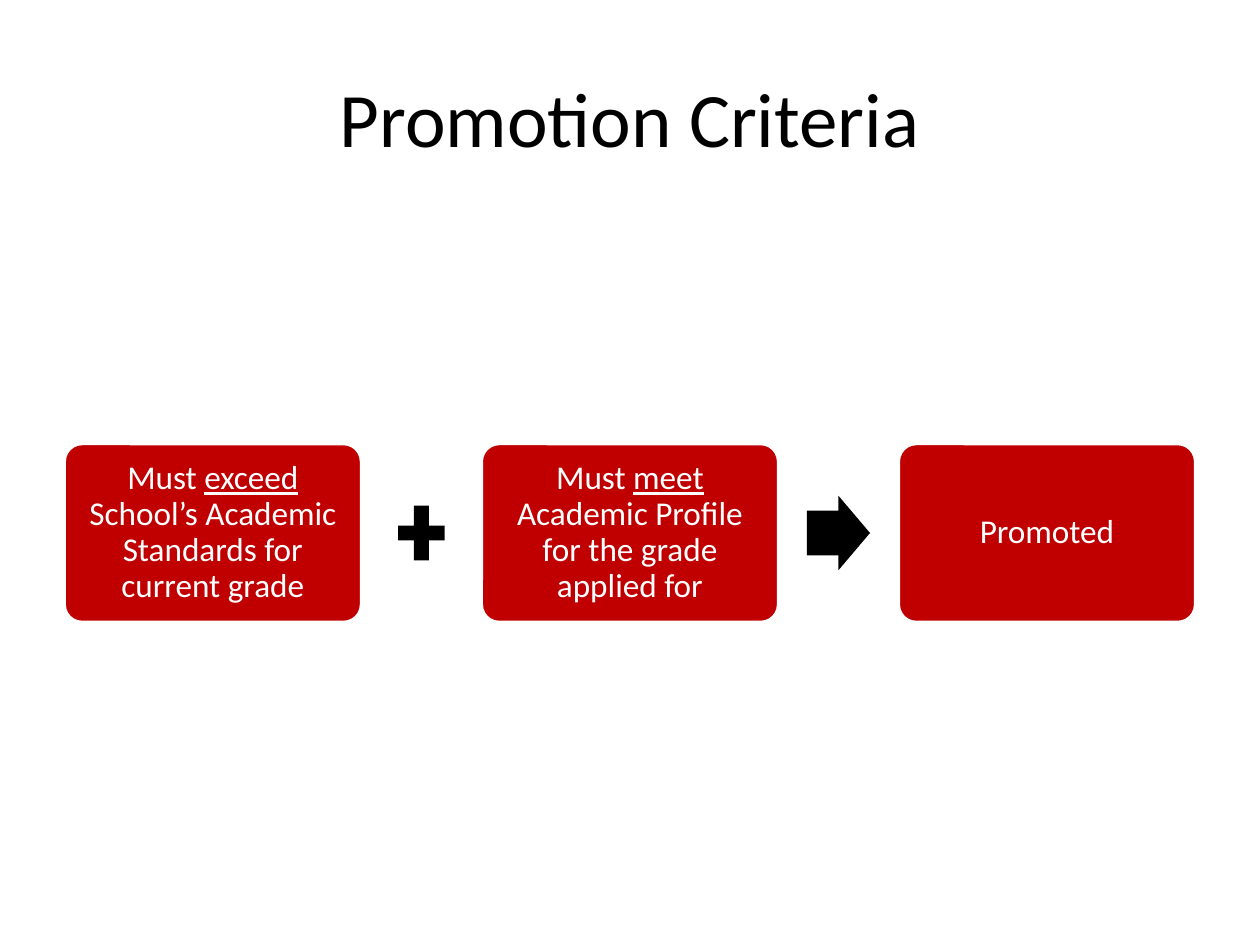
from pptx import Presentation
from pptx.dml.color import RGBColor
from pptx.enum.shapes import MSO_SHAPE
from pptx.enum.text import MSO_ANCHOR, PP_ALIGN
from pptx.util import Inches, Pt

RED = RGBColor(0xC0, 0x00, 0x00)
WHITE = RGBColor(0xFF, 0xFF, 0xFF)
BLACK = RGBColor(0x00, 0x00, 0x00)

# Each step is a list of (text, underlined) spans.
STEPS = [
    [("Must ", False), ("exceed", True),
     (" School’s Academic Standards for current grade", False)],
    [("Must ", False), ("meet ", True),
     ("Academic Profile for the grade applied for", False)],
    [("Promoted", False)],
]
SIGNS = [(MSO_SHAPE.MATH_PLUS, []), (MSO_SHAPE.RIGHT_ARROW, [0.6, 0.5])]


def write_text(shape, spans, size, color, inset=0.1, line_spacing=None):
    frame = shape.text_frame
    frame.word_wrap = True
    frame.vertical_anchor = MSO_ANCHOR.MIDDLE
    frame.margin_left = frame.margin_right = Inches(inset)
    frame.margin_top = frame.margin_bottom = Inches(inset)
    para = frame.paragraphs[0]
    para.alignment = PP_ALIGN.CENTER
    para.line_spacing = line_spacing
    for text, underlined in spans:
        span = para.add_run()
        span.text = text
        span.font.name = "Calibri"
        span.font.size = Pt(size)
        span.font.color.rgb = color
        span.font.underline = underlined


def add_filled_shape(page, kind, box, fill, adjustments=(), outline=None):
    shape = page.shapes.add_shape(kind, *map(Inches, box))
    shape.shadow.inherit = False
    shape.fill.solid()
    shape.fill.fore_color.rgb = fill
    if outline is None:
        shape.line.fill.background()
    else:
        shape.line.color.rgb = outline
        shape.line.width = Pt(2)
    for index, value in enumerate(adjustments):
        shape.adjustments[index] = value
    return shape


def add_title(page, box):
    title = page.shapes.add_textbox(*map(Inches, box))
    write_text(title, [("Promotion Criteria", False)], 44, BLACK)


def add_equation(page, box, card_width=2.36, sign_width=0.5, sign_height=0.59):
    """Spread the step cards over the box, with a sign centred in each gap."""
    left, top, width, height = box
    pitch = (width - card_width) / (len(STEPS) - 1)
    for index, spans in enumerate(STEPS):
        card_box = (left + index * pitch, top, card_width, height)
        card = add_filled_shape(page, MSO_SHAPE.ROUNDED_RECTANGLE, card_box,
                                RED, [0.1], WHITE)
        write_text(card, spans, 19, WHITE, inset=0.08, line_spacing=0.9)
    sign_left = left + (card_width + pitch - sign_width) / 2
    sign_top = top + (height - sign_height) / 2
    for index, (kind, adjustments) in enumerate(SIGNS):
        sign_box = (sign_left + index * pitch, sign_top, sign_width, sign_height)
        add_filled_shape(page, kind, sign_box, BLACK, adjustments)


def main():
    deck = Presentation()
    deck.slide_width, deck.slide_height = Inches(10), Inches(7.5)
    page = deck.slides.add_slide(deck.slide_layouts[6])
    add_title(page, (0.5, 0.3, 9, 1.25))
    add_equation(page, (0.51, 3.52, 8.98, 1.42))
    deck.save("out.pptx")


if __name__ == "__main__":
    main()
